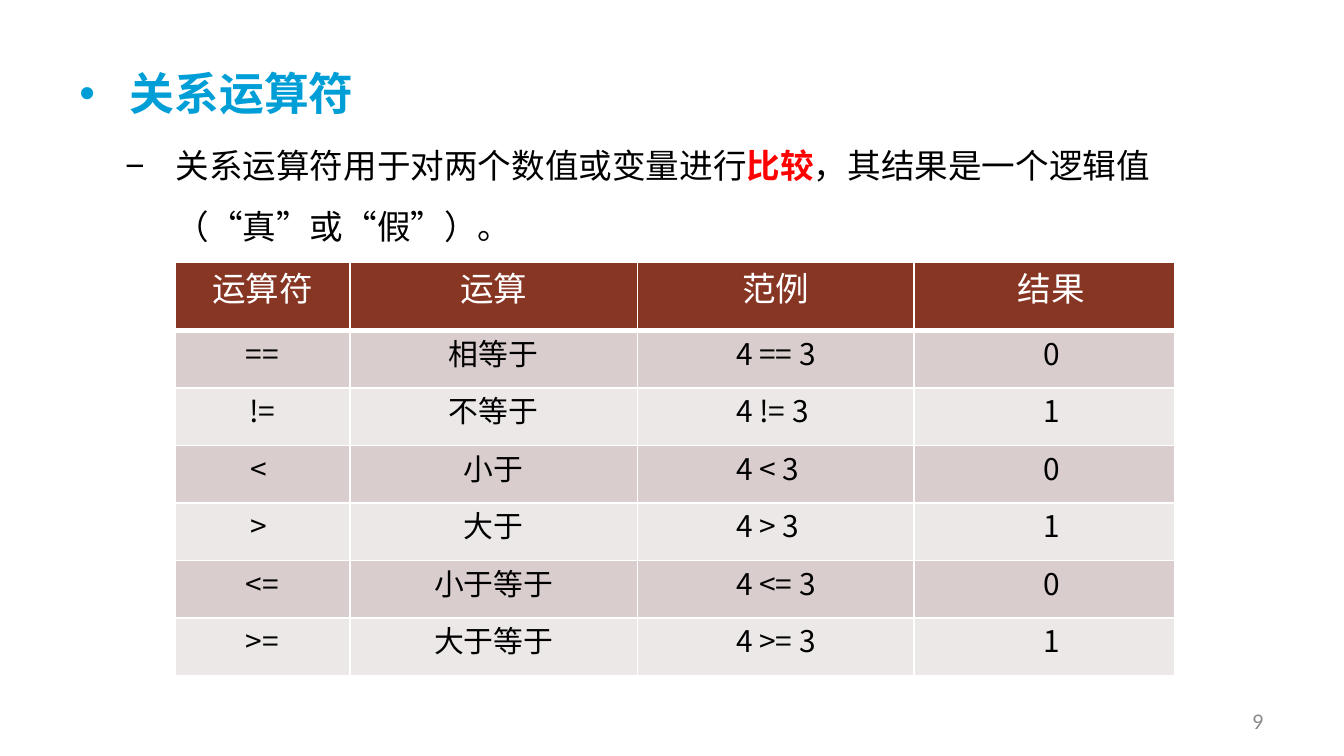
from lxml import etree
from pptx import Presentation
from pptx.dml.color import RGBColor
from pptx.enum import text as t
from pptx.oxml.ns import qn
from pptx.util import Pt

LATIN, CJK = "Calibri", "Noto Sans CJK SC"
BLACK, WHITE, RED, BLUE, GREY = "000000", "FFFFFF", "FF0000", "009ED6", "8C8C8C"
HEADER_FILL, BAND_FILLS = "873624", ("D9CECD", "EDE8E8")
ALIGN = t.PP_ALIGN

HEADERS = ("运算符", "运算", "范例", "结果")
OPERATORS = (
    ("==", "相等于", "4 == 3", "0"),
    ("!=", "不等于", "4 != 3", "1"),
    ("< ", "小于", "4 < 3", "0"),
    ("> ", "大于", "4 > 3", "1"),
    ("<=", "小于等于", "4 <= 3", "0"),
    (">=", "大于等于", "4 >= 3", "1"),
)
COLUMN_WIDTHS = (93.6, 154.1, 148.3, 139.7)
FIRST_LINE_INDENTS = (0, 0, 47.5, 7.2)
HEADER_HEIGHT, ROW_HEIGHT = 36.8, 30.8


def rgb(value):
    return RGBColor.from_string(value)


def place(shape, left, top, width, height):
    shape.left, shape.top = Pt(left), Pt(top)
    shape.width, shape.height = Pt(width), Pt(height)


def style(paragraph, size, color, latin=LATIN, bold=False):
    font = paragraph.font
    font.size, font.name, font.bold = Pt(size), latin, bold
    font.color.rgb = rgb(color)
    etree.SubElement(paragraph._p.pPr.find(qn("a:defRPr")), qn("a:ea"), typeface=CJK)


def indent(paragraph, first_line, left=0):
    properties = paragraph._p.get_or_add_pPr()
    properties.set("marL", str(Pt(left)))
    properties.set("indent", str(Pt(first_line)))
    return properties


def add_bullet(paragraph, mark):
    paragraph.alignment = ALIGN.LEFT
    paragraph.line_spacing = 1.5
    paragraph.space_before = Pt(0)
    properties = indent(paragraph, -27, 27)
    etree.SubElement(properties, qn("a:buFont"), typeface="Arial")
    etree.SubElement(properties, qn("a:buChar"), char=mark)


def fill_heading(heading):
    place(heading, 35.3, 17.3, 163.4, 51.1)
    frame = heading.text_frame
    frame.word_wrap = False
    frame.auto_size = t.MSO_AUTO_SIZE.SHAPE_TO_FIT_TEXT
    frame.vertical_anchor = t.MSO_ANCHOR.TOP
    frame.text = "关系运算符"
    add_bullet(frame.paragraphs[0], "•")
    style(frame.paragraphs[0], 24, BLUE, bold=True)


def fill_definition(definition):
    place(definition, 59.8, 63.4, 576.7, 74.9)
    frame = definition.text_frame
    frame.auto_size = t.MSO_AUTO_SIZE.NONE
    sentence = frame.paragraphs[0]
    add_bullet(sentence, "−")
    style(sentence, 18, BLACK)
    sentence.add_run().text = "关系运算符用于对两个数值或变量进行"
    keyword = sentence.add_run()
    keyword.text = "比较"
    keyword.font.bold = True
    keyword.font.color.rgb = rgb(RED)
    sentence.add_run().text = "，其结果是一个逻辑值（“真”或“假”）。"


def add_borders(cell, bottom_width):
    """Draw white cell borders; they must precede the fill in the XML."""
    properties = cell._tc.get_or_add_tcPr()
    for side, width in (("L", 1), ("R", 1), ("T", 1), ("B", bottom_width)):
        line = etree.SubElement(properties, qn(f"a:ln{side}"), w=str(Pt(width)))
        paint = etree.SubElement(line, qn("a:solidFill"))
        etree.SubElement(paint, qn("a:srgbClr"), val=WHITE)


def fill_cell(cell, content, row, column):
    is_header = row == 0
    add_borders(cell, 3 if is_header else 1)
    cell.fill.solid()
    cell.fill.fore_color.rgb = rgb(HEADER_FILL if is_header else BAND_FILLS[(row - 1) % 2])
    cell.margin_left = cell.margin_right = Pt(5.4)
    cell.margin_top = cell.margin_bottom = Pt(0)
    cell.text = content
    paragraph = cell.text_frame.paragraphs[0]
    is_example = column == 2 and not is_header
    paragraph.alignment = ALIGN.JUSTIFY if is_example else ALIGN.CENTER
    if is_example or column == 3:
        indent(paragraph, FIRST_LINE_INDENTS[column])
    style(paragraph, 18 if is_header else 16, WHITE if is_header else BLACK, CJK)


def add_operator_table(slide):
    rows = (HEADERS, *OPERATORS)
    height = HEADER_HEIGHT + ROW_HEIGHT * len(OPERATORS)
    table = slide.shapes.add_table(
        len(rows), len(HEADERS), Pt(93.8), Pt(140.4), Pt(sum(COLUMN_WIDTHS)), Pt(height)
    ).table
    for column, width in zip(table.columns, COLUMN_WIDTHS):
        column.width = Pt(width)
    for r, contents in enumerate(rows):
        table.rows[r].height = Pt(ROW_HEIGHT if r else HEADER_HEIGHT)
        for c, content in enumerate(contents):
            fill_cell(table.cell(r, c), content, r, c)


def add_page_number(slide, number):
    frame = slide.shapes.add_textbox(Pt(516.2), Pt(375.1), Pt(167.8), Pt(21.6)).text_frame
    frame.word_wrap = True
    frame.vertical_anchor = t.MSO_ANCHOR.MIDDLE
    frame.text = number
    frame.paragraphs[0].alignment = ALIGN.RIGHT
    style(frame.paragraphs[0], 12, GREY)


def main():
    deck = Presentation()
    deck.slide_width, deck.slide_height = Pt(720), Pt(405)
    slide = deck.slides.add_slide(deck.slide_layouts[1])
    fill_heading(slide.shapes.title)
    fill_definition(slide.placeholders[1])
    add_operator_table(slide)
    add_page_number(slide, "9")
    deck.save("out.pptx")


if __name__ == "__main__":
    main()
